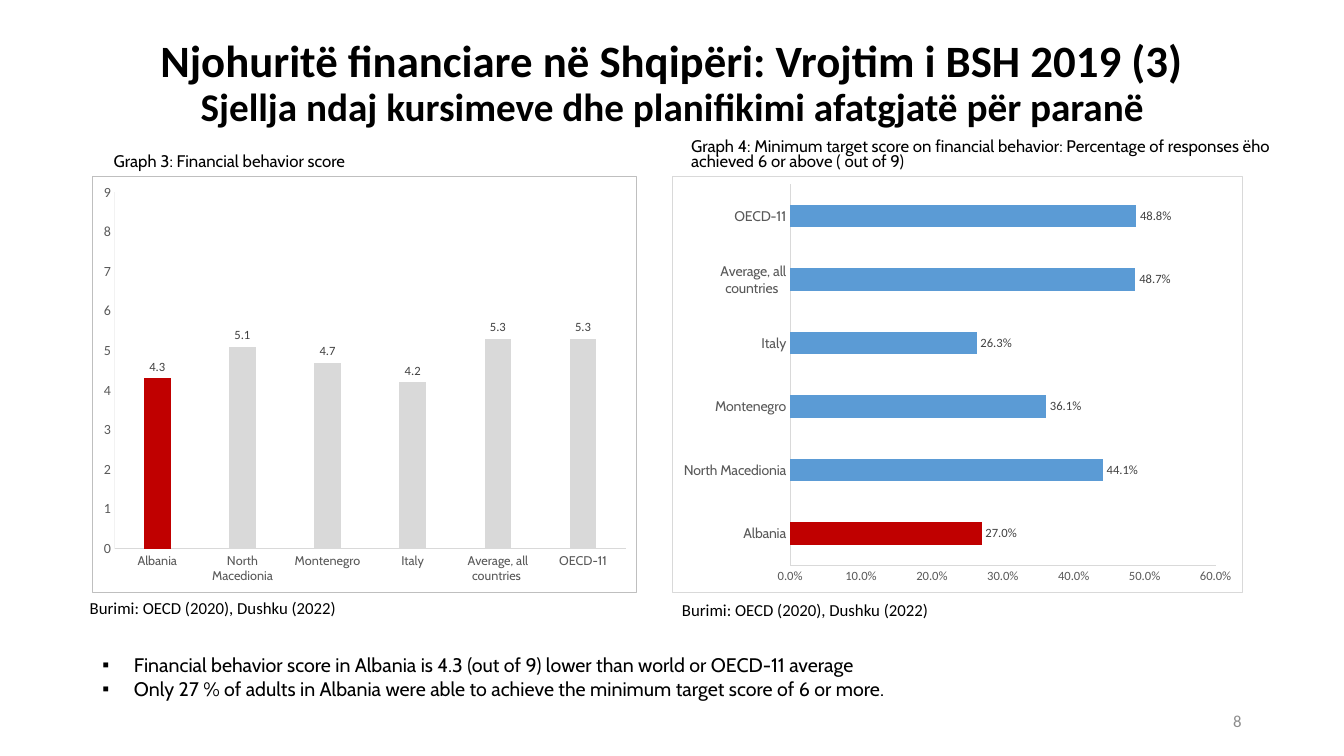
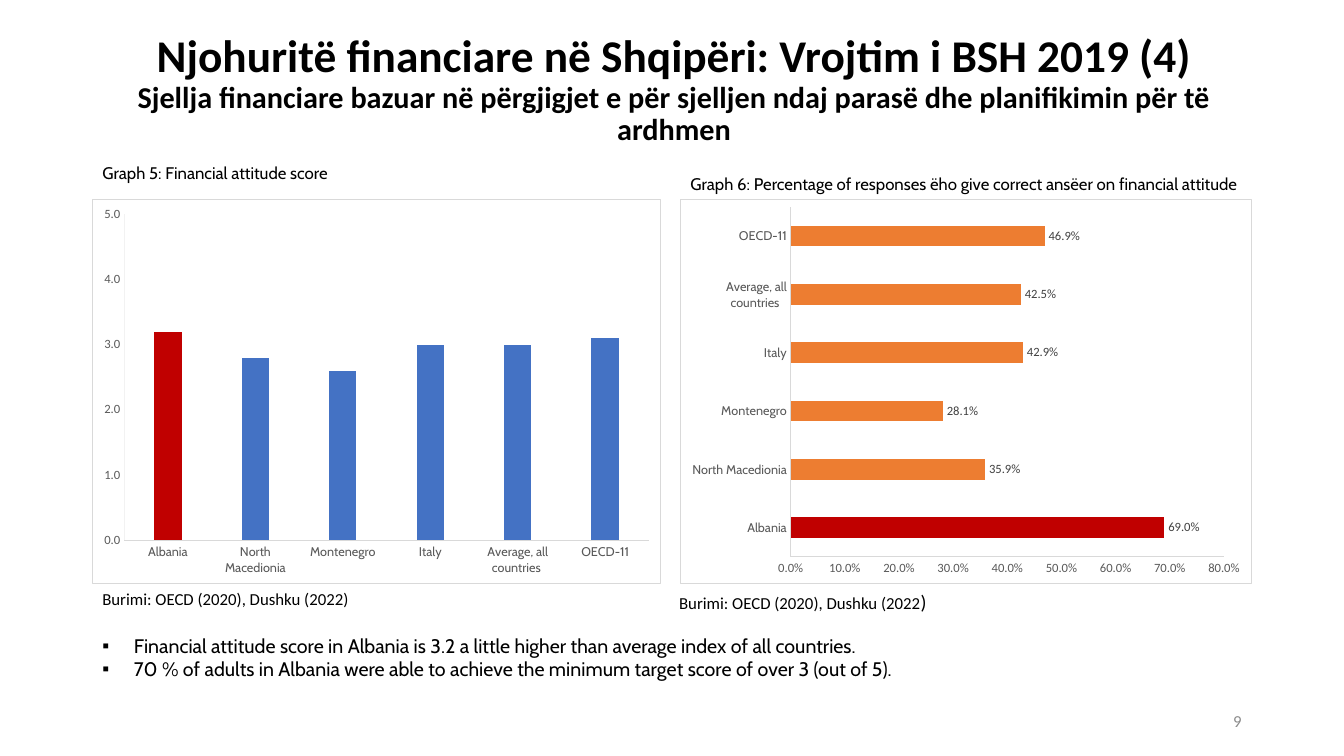
from dataclasses import dataclass

from lxml.etree import SubElement
from pptx import Presentation
from pptx.chart.data import CategoryChartData
from pptx.dml.color import RGBColor
from pptx.enum.chart import XL_CHART_TYPE, XL_LABEL_POSITION, XL_TICK_MARK
from pptx.enum.text import MSO_ANCHOR, MSO_AUTO_SIZE, PP_ALIGN
from pptx.oxml import parse_xml
from pptx.oxml.ns import nsdecls, qn
from pptx.util import Pt


@dataclass(frozen=True)
class Theme:
    heading_font: str = "Calibri"
    body_font: str = "Cabin"
    ink: str = "000000"
    axis_text: str = "595959"
    label_text: str = "404040"
    number_text: str = "8C8C8C"
    line: str = "D9D9D9"
    faint_line: str = "F2F2F2"
    dark_line: str = "BFBFBF"
    highlight: str = "C00000"
    gray: str = "D9D9D9"
    light_blue: str = "5B9BD5"
    blue: str = "4472C4"
    orange: str = "ED7D31"
    caption_size: float = 12
    bullet_size: float = 14
    axis_size: float = 9
    large_axis_size: float = 10
    line_width: float = 0.75


THEME = Theme()
COUNTRIES = ["Albania", "North Macedionia", "Montenegro", "Italy",
             "Average, all countries ", "OECD-11"]
TITLE = "Njohuritë financiare në Shqipëri: Vrojtim i BSH 2019"
SOURCE = "Burimi: OECD (2020), Dushku (2022"
PERCENT = "0.0%"
NUMBER_BOX = (678, 500.5, 216, 29)
BULLET_INDENT = 22.5


def format_font(font, name, size, color, bold=False):
    font.name = name
    font.size = Pt(size)
    font.bold = bold
    font.color.rgb = RGBColor.from_string(color)


def add_text(paragraph, text, font=THEME.heading_font, size=THEME.caption_size,
             color=THEME.ink, bold=False, align=None, spacing=None):
    run = paragraph.add_run()
    run.text = text
    format_font(run.font, font, size, color, bold)
    if align is not None:
        paragraph.alignment = align
    if spacing is not None:
        paragraph.line_spacing = spacing


def place(shape, box):
    shape.left, shape.top, shape.width, shape.height = map(Pt, box)


def prepare_frame(shape, box, anchor, wrap=True):
    place(shape, box)
    frame = shape.text_frame
    frame.word_wrap = wrap
    frame.auto_size = MSO_AUTO_SIZE.NONE
    frame.vertical_anchor = anchor
    return frame


def add_title(slide, box, number, subtitle, sizes):
    frame = prepare_frame(slide.shapes.title, box, MSO_ANCHOR.MIDDLE)
    paragraph = frame.paragraphs[0]
    add_text(paragraph, f"{TITLE} ({number})", size=sizes[0], bold=True,
             align=PP_ALIGN.CENTER, spacing=0.9)
    paragraph.add_line_break()
    add_text(paragraph, subtitle, size=sizes[1], bold=True)


def add_caption(placeholder, box, text, spacing):
    frame = prepare_frame(placeholder, box, MSO_ANCHOR.BOTTOM)
    paragraph = frame.paragraphs[0]
    paragraph.space_before = Pt(10)
    add_text(paragraph, text, font=THEME.body_font, spacing=spacing)


def add_bullets(placeholder, box, items):
    frame = prepare_frame(placeholder, box, MSO_ANCHOR.TOP)
    for index, item in enumerate(items):
        paragraph = frame.add_paragraph() if index else frame.paragraphs[0]
        paragraph.space_before = paragraph.space_after = Pt(0)
        add_text(paragraph, item, font=THEME.body_font, size=THEME.bullet_size, spacing=1.0)
        properties = paragraph._p.get_or_add_pPr()
        properties.set("marL", str(Pt(BULLET_INDENT)))
        properties.set("indent", str(-Pt(BULLET_INDENT)))
        SubElement(properties, qn("a:buFont"), typeface="Arial")
        SubElement(properties, qn("a:buChar"), char="▪")


def add_text_box(slide, box, anchor=MSO_ANCHOR.TOP, wrap=True):
    shape = slide.shapes.add_textbox(*map(Pt, box))
    return prepare_frame(shape, box, anchor, wrap).paragraphs[0]


def add_source(slide, left, top, closing_size=THEME.caption_size):
    paragraph = add_text_box(slide, (left, top, 193, 22), wrap=False)
    add_text(paragraph, SOURCE)
    add_text(paragraph, ")", size=closing_size)


def add_page_number(slide, number):
    paragraph = add_text_box(slide, NUMBER_BOX, MSO_ANCHOR.MIDDLE)
    add_text(paragraph, str(number), color=THEME.number_text, align=PP_ALIGN.RIGHT)


def format_axis(axis, font, size, line):
    axis.has_major_gridlines = False
    axis.major_tick_mark = axis.minor_tick_mark = XL_TICK_MARK.NONE
    format_font(axis.tick_labels.font, font, size, THEME.axis_text)
    axis.format.line.color.rgb = RGBColor.from_string(line)
    axis.format.line.width = Pt(THEME.line_width)


def add_border(chart, color):
    border = parse_xml(
        f'<c:spPr {nsdecls("c", "a")}><a:noFill/><a:ln w="{Pt(THEME.line_width)}">'
        f'<a:solidFill><a:srgbClr val="{color}"/></a:solidFill></a:ln></c:spPr>')
    chart.element.find(qn("c:txPr")).addprevious(border)


def add_score_chart(slide, box, values, color, maximum, step, horizontal=False,
                    axis_format="General", label_format=None, border=THEME.line,
                    category_size=THEME.axis_size, value_size=THEME.axis_size):
    data = CategoryChartData()
    data.categories = COUNTRIES
    data.add_series("Series 1", values)
    kind = XL_CHART_TYPE.BAR_CLUSTERED if horizontal else XL_CHART_TYPE.COLUMN_CLUSTERED
    chart = slide.shapes.add_chart(kind, *map(Pt, box), data).chart
    chart.has_legend = False
    chart.has_title = False
    format_font(chart.font, THEME.heading_font, 10, THEME.ink)
    add_border(chart, border)

    format_axis(chart.category_axis, THEME.body_font, category_size, THEME.line)
    axis = chart.value_axis
    format_axis(axis, THEME.heading_font, value_size,
                THEME.line if horizontal else THEME.faint_line)
    axis.minimum_scale, axis.maximum_scale, axis.major_unit = 0, maximum, step
    axis.tick_labels.number_format = axis_format
    axis.tick_labels.number_format_is_linked = False

    plot = chart.plots[0]
    plot.vary_by_categories = False
    plot.gap_width = 182 if horizontal else 219
    plot.overlap = 0 if horizontal else -27
    series = plot.series[0]
    series.invert_if_negative = False
    for target, fill_color in ((series, color), (series.points[0], THEME.highlight)):
        target.format.fill.solid()
        target.format.fill.fore_color.rgb = RGBColor.from_string(fill_color)
    if label_format:
        labels = series.data_labels
        labels.show_value = True
        labels.number_format = label_format
        labels.number_format_is_linked = False
        labels.position = XL_LABEL_POSITION.OUTSIDE_END
        format_font(labels.font, THEME.heading_font, 9, THEME.label_text)


def add_survey_slide(presentation, number, title, captions, charts, sources, bullets):
    slide = presentation.slides.add_slide(presentation.slide_layouts[4])
    placeholders = {shape.placeholder_format.idx: shape for shape in slide.placeholders}
    unused = placeholders[4].element
    unused.getparent().remove(unused)
    add_title(slide, **title)
    for index, caption in zip((1, 3), captions):
        add_caption(placeholders[index], **caption)
    for chart in charts:
        add_score_chart(slide, **chart)
    for source in sources:
        add_source(slide, **source)
    add_bullets(placeholders[2], **bullets)
    add_page_number(slide, number)


def main():
    presentation = Presentation()
    presentation.slide_width, presentation.slide_height = Pt(960), Pt(540)
    percent_bars = dict(horizontal=True, axis_format=PERCENT, label_format=PERCENT, step=0.1)

    add_survey_slide(
        presentation, 8,
        title=dict(box=(66, 22.5, 828, 75.5), number=3, sizes=(32, 28),
                   subtitle="Sjellja ndaj kursimeve dhe planifikimi afatgjatë për paranë"),
        captions=[
            dict(box=(74, 98, 406, 27), spacing=0.7, text="Graph 3: Financial behavior score"),
            dict(box=(486.5, 98, 459, 27), spacing=0.7,
                 text="Graph 4: Minimum target score on financial behavior: "
                      "Percentage of responses ëho achieved 6 or above ( out of 9)")],
        charts=[
            dict(box=(66, 125.5, 389, 298), values=[4.3, 5.1, 4.7, 4.2, 5.3, 5.3],
                 color=THEME.gray, maximum=9, step=1, label_format="0.0",
                 border=THEME.dark_line, value_size=THEME.large_axis_size),
            dict(box=(480, 125.5, 408, 298), color=THEME.light_blue, maximum=0.6,
                 values=[0.27, 0.441, 0.361, 0.263, 0.487, 0.488],
                 category_size=THEME.large_axis_size, **percent_bars)],
        sources=[dict(left=57, top=423.5), dict(left=480, top=425)],
        bullets=dict(box=(66, 463, 690, 41), items=[
            "Financial behavior score in Albania is 4.3 (out of 9) lower than world "
            "or OECD-11 average",
            "Only 27 % of adults in Albania were able to achieve the minimum target score "
            "of 6 or more."]))

    add_survey_slide(
        presentation, 9,
        title=dict(box=(49, 24, 865, 81), number=4, sizes=(32.4, 21.6),
                   subtitle="Sjellja financiare bazuar në përgjigjet e për sjelljen ndaj "
                            "parasë dhe planifikimin për të ardhmen"),
        captions=[
            dict(box=(66, 102, 406, 32.5), spacing=0.9, text="Graph 5: Financial attitude score"),
            dict(box=(486, 110, 428, 32), spacing=0.8,
                 text="Graph 6: Percentage of responses ëho give correct ansëer "
                      "on financial attitude")],
        charts=[
            dict(box=(66, 142, 406, 275), values=[3.2, 2.8, 2.6, 3, 3, 3.1],
                 color=THEME.blue, maximum=5, step=1, axis_format="0.0"),
            dict(box=(486, 142, 408, 275), color=THEME.orange, maximum=0.8,
                 values=[0.69, 0.359, 0.281, 0.429, 0.425, 0.469], **percent_bars)],
        sources=[dict(left=66, top=417), dict(left=478, top=418, closing_size=14)],
        bullets=dict(box=(66, 449, 690, 41), items=[
            "Financial attitude score in Albania is 3.2 a little higher than average index "
            "of all countries.",
            "70 % of adults in Albania were able to achieve the minimum target score "
            "of over 3 (out of 5)."]))

    presentation.save("out.pptx")


if __name__ == "__main__":
    main()
